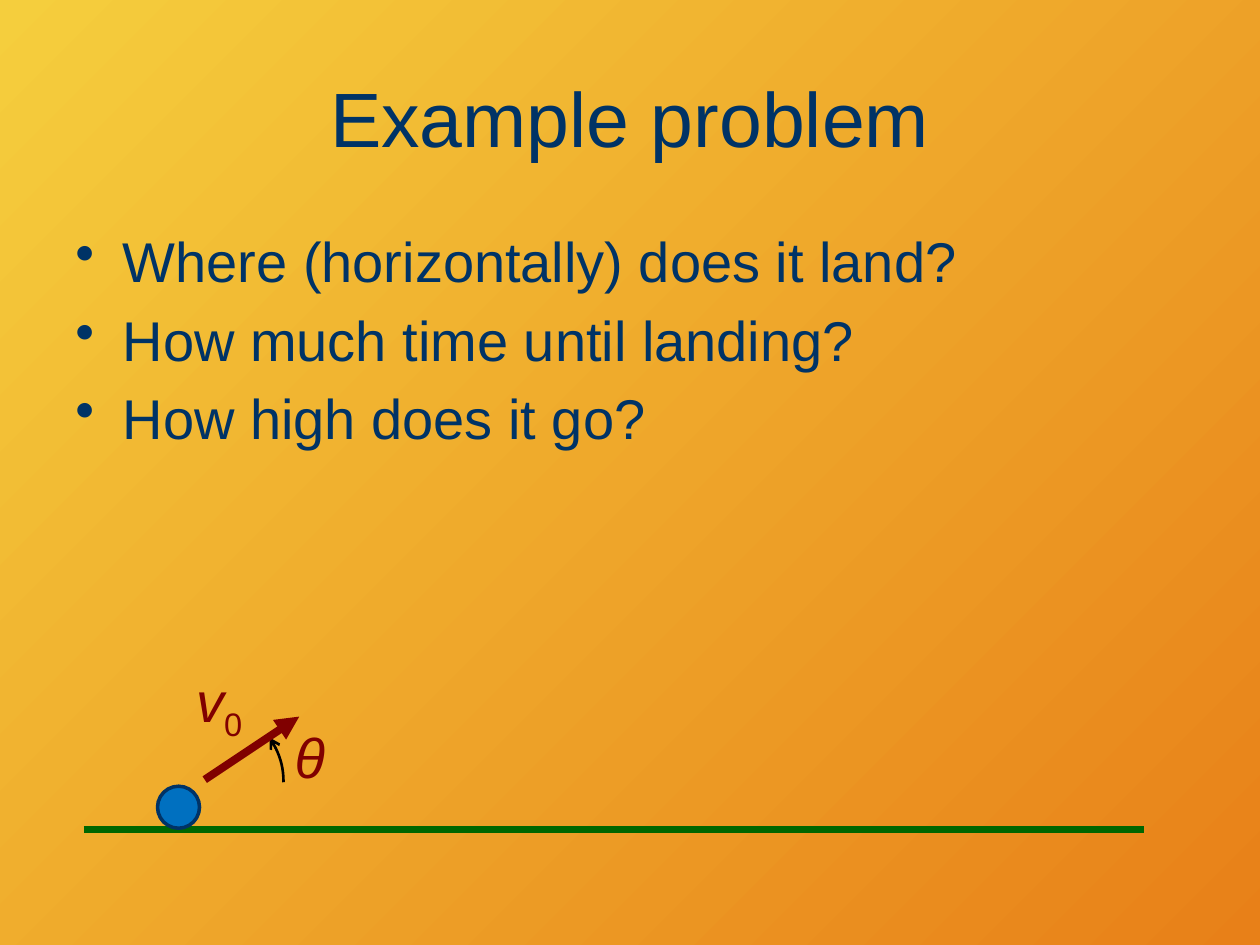
from dataclasses import dataclass

from lxml import etree
from pptx import Presentation
from pptx.dml.color import RGBColor
from pptx.enum.shapes import MSO_CONNECTOR, MSO_SHAPE
from pptx.enum.text import MSO_ANCHOR, MSO_AUTO_SIZE, PP_ALIGN
from pptx.oxml.ns import qn
from pptx.util import Inches, Pt

STRAIGHT = MSO_CONNECTOR.STRAIGHT
OVAL, ARC = MSO_SHAPE.OVAL, MSO_SHAPE.ARC
MIDDLE, CENTER = MSO_ANCHOR.MIDDLE, PP_ALIGN.CENTER
GROW = MSO_AUTO_SIZE.SHAPE_TO_FIT_TEXT
CELL = Inches(1) / 24


@dataclass(frozen=True)
class Theme:
    font: str = "Arial"
    title: int = 44
    body: int = 32
    ink: str = "003366"
    ground: str = "006600"
    ball: str = "0070C0"
    vector: str = "800000"
    angle: str = "000000"
    back: tuple = ("F5CE3D", "E88018")
    thick: float = 4.5
    outline: float = 2
    thin: float = 1.5


THEME = Theme()


def grid(*cells):
    return [round(c * CELL) for c in cells]


def rgb(value):
    return RGBColor.from_string(value)


def add_xml(parent, tag, **attrs):
    return etree.SubElement(parent, qn(tag), attrs)


def paint_background(s):
    fill = s.background.fill
    fill.gradient()
    fill.gradient_angle = 315
    for stop, color, position in zip(fill.gradient_stops, THEME.back, (0, 1)):
        stop.color.rgb = rgb(color)
        stop.position = position


def style_line(line, color, width):
    line.color.rgb = rgb(color)
    line.width = Pt(width)


def style_font(p, size, color, italic=False):
    p.font.name = THEME.font
    p.font.size = Pt(size)
    p.font.color.rgb = rgb(color)
    p.font.italic = italic


def add_title(s, text, box):
    tf = s.shapes.add_textbox(*grid(*box)).text_frame
    tf.word_wrap = True
    tf.vertical_anchor = MIDDLE
    p = tf.paragraphs[0]
    p.text = text
    p.alignment = CENTER
    style_font(p, THEME.title, THEME.ink)


def add_bullets(s, items, box):
    tf = s.shapes.add_textbox(*grid(*box)).text_frame
    tf.word_wrap = True
    tf.text = "\n".join(items)
    indent, = grid(9)
    for p in tf.paragraphs:
        style_font(p, THEME.body, THEME.ink)
        pPr = p._p.get_or_add_pPr()
        pPr.set("marL", str(indent))
        pPr.set("indent", str(-indent))
        bullet = etree.Element(qn("a:buChar"), char="•")
        space = etree.Element(qn("a:spcBef"))
        add_xml(space, "a:spcPct", val="20000")
        pPr.insert(0, space)
        pPr.insert(1, bullet)


def add_line(shapes, start, end, color, arrow=False):
    c = shapes.add_connector(STRAIGHT, *grid(*start, *end))
    style_line(c.line, color, THEME.thick)
    if arrow:
        add_xml(c.line._get_or_add_ln(), "a:tailEnd", type="triangle")
    add_xml(c._element.spPr, "a:effectLst")


def add_ball(shapes, box):
    sp = shapes.add_shape(OVAL, *grid(*box))
    sp.shadow.inherit = False
    sp.fill.solid()
    sp.fill.fore_color.rgb = rgb(THEME.ball)
    style_line(sp.line, THEME.ink, THEME.outline)


def add_angle(shapes, box, start):
    sp = shapes.add_shape(ARC, *grid(*box))
    sp.shadow.inherit = False
    sp.fill.background()
    sp.adjustments[0] = start * 0.6
    sp.adjustments[1] = 0
    style_line(sp.line, THEME.angle, THEME.thin)
    add_xml(sp.line._get_or_add_ln(), "a:headEnd", type="arrow")


def add_symbol(shapes, letter, box, subscript=""):
    tf = shapes.add_textbox(*grid(*box)).text_frame
    tf.word_wrap = False
    tf.auto_size = GROW
    p = tf.paragraphs[0]
    for text, is_sub in ((letter, False), (subscript, True)):
        if text:
            r = p.add_run()
            r.text = text
            style_font(r, THEME.body, THEME.vector, not is_sub)
            if is_sub:
                r.font._element.set("baseline", "-25000")


def add_launch(s):
    shapes = s.shapes.add_group_shape().shapes
    add_line(shapes, (16, 158), (218, 158), THEME.ground)
    add_ball(shapes, (30, 149.75, 8, 8))
    add_angle(shapes, (24, 134, 30, 30), 325.52)
    add_line(shapes, (39, 148.5), (57, 136.5), THEME.vector, arrow=True)
    add_symbol(shapes, "v", (35, 125.75, 14.2, 15.4), "0")
    add_symbol(shapes, "θ", (53.75, 136.5, 10.5, 15.4))


def main():
    prs = Presentation()
    prs.slide_width, prs.slide_height = grid(240, 180)
    s = prs.slides.add_slide(prs.slide_layouts[6])
    paint_background(s)
    add_title(s, "Example problem", (12, 7.2, 216, 30))
    add_bullets(s, (
        "Where (horizontally) does it land?",
        "How much time until landing?",
        "How high does it go?",
    ), (12, 42, 216, 60))
    add_launch(s)
    prs.save("out.pptx")


if __name__ == "__main__":
    main()
